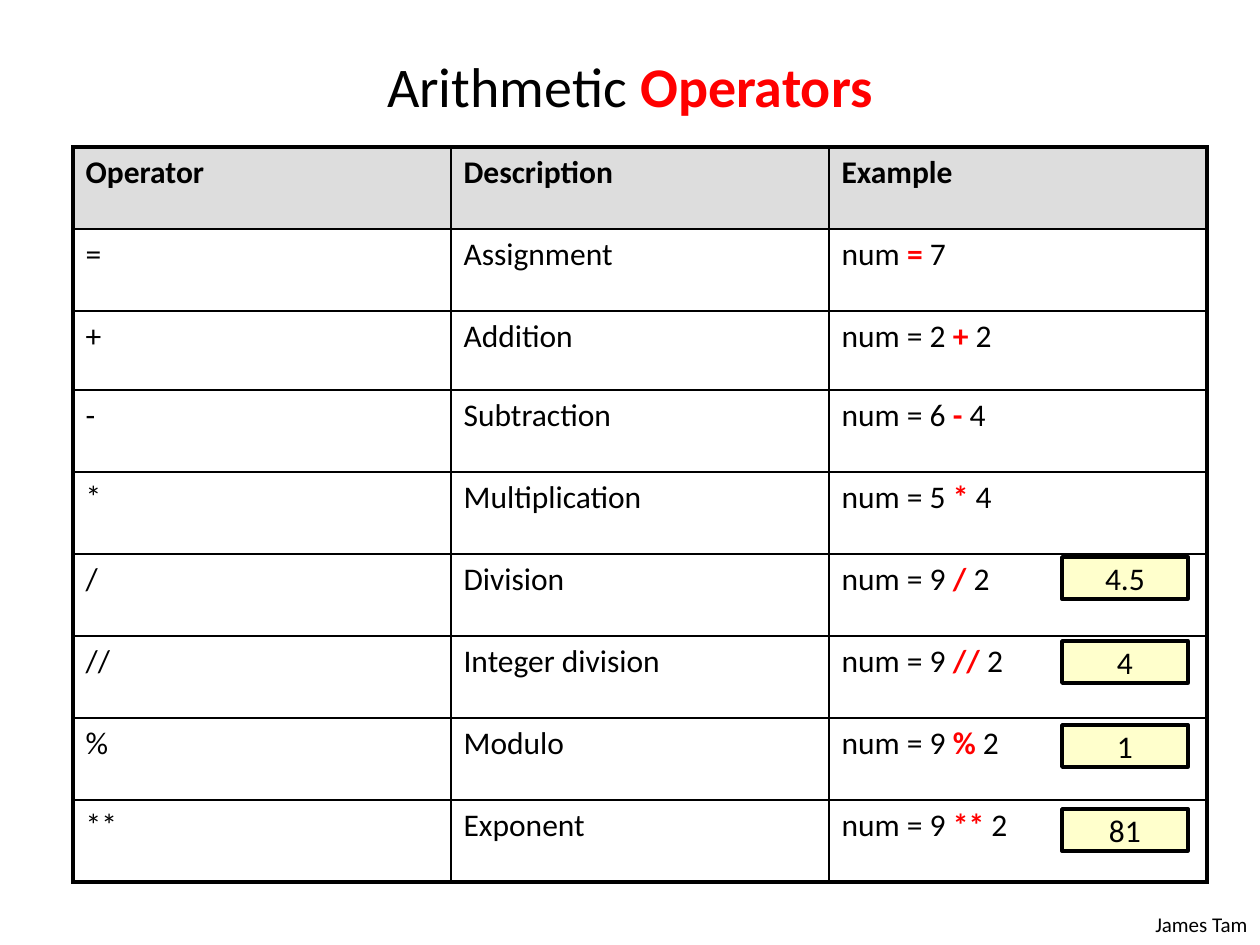
from dataclasses import dataclass

from lxml import etree
from pptx import Presentation
from pptx.dml.color import RGBColor
from pptx.enum.shapes import MSO_SHAPE
from pptx.enum.text import MSO_ANCHOR, PP_ALIGN
from pptx.oxml.ns import qn
from pptx.util import Emu, Pt

RECT = MSO_SHAPE.RECTANGLE
MIDDLE = MSO_ANCHOR.MIDDLE
CENTER, RIGHT = PP_ALIGN.CENTER, PP_ALIGN.RIGHT
PX_PER_INCH = 126


@dataclass(frozen=True)
class Theme:
    font: str = "Calibri"
    ink: str = "000000"
    accent: str = "FF0000"
    header: str = "DDDDDD"
    answer: str = "FFFFCC"
    title_size: int = 32
    body_size: int = 18
    footer_size: int = 12
    outer_line: float = 2.25
    inner_line: float = 1
    answer_line: float = 2


@dataclass(frozen=True)
class Operator:
    symbol: str
    description: str
    before: str
    after: str


THEME = Theme()
HEADINGS = ("Operator", "Description", "Example")
OPERATORS = (
    Operator("=", "Assignment", "num ", " 7"),
    Operator("+", "Addition", "num = 2 ", " 2"),
    Operator("-", "Subtraction", "num = 6 ", " 4"),
    Operator("*", "Multiplication", "num = 5 ", " 4"),
    Operator("/", "Division", "num = 9 ", " 2"),
    Operator("//", "Integer division", "num = 9 ", " 2"),
    Operator("%", "Modulo", "num = 9 ", " 2"),
    Operator("**", "Exponent", "num = 9 ", " 2"),
)
ANSWERS = ("4.5", "4", "1", "81")
COL_WIDTH, ROW_HEIGHT, ADDITION_HEIGHT = 378, 82, 79
ADDITION_ROW = 2
ANSWER_TOP, ANSWER_STEP = 557, 84


def px(n: int) -> Emu:
    return Emu(round(n * 914400 / PX_PER_INCH))


def box(left: int, top: int, width: int, height: int) -> tuple[Emu, ...]:
    return px(left), px(top), px(width), px(height)


def add_run(p, text: str, size: int, bold: bool = False, color: str = THEME.ink) -> None:
    r = p.add_run()
    r.text = text
    r.font.name = THEME.font
    r.font.size = Pt(size)
    r.font.bold = bold
    r.font.color.rgb = RGBColor.from_string(color)


def set_borders(cell, widths: dict[str, float]) -> None:
    """Give each side (L, R, T, B, in that order) a solid line in points."""
    tc_pr = cell._tc.get_or_add_tcPr()
    for i, (side, width) in enumerate(widths.items()):
        ln = etree.Element(qn(f"a:ln{side}"), w=str(Pt(width)))
        fill = etree.SubElement(ln, qn("a:solidFill"))
        etree.SubElement(fill, qn("a:srgbClr"), val=THEME.ink)
        tc_pr.insert(i, ln)


def add_title(slide) -> None:
    sp = slide.shapes.title
    sp.left, sp.top, sp.width, sp.height = box(63, 35, 1134, 101)
    tf = sp.text_frame
    tf.vertical_anchor = MIDDLE
    p = tf.paragraphs[0]
    p.alignment = CENTER
    add_run(p, "Arithmetic ", THEME.title_size)
    add_run(p, "Operators", THEME.title_size, True, THEME.accent)


def add_operator_table(slide) -> None:
    n_rows, n_cols = len(OPERATORS) + 1, len(HEADINGS)
    heights = [ROW_HEIGHT] * n_rows
    heights[ADDITION_ROW] = ADDITION_HEIGHT
    frame = slide.shapes.add_table(
        n_rows, n_cols, *box(73, 147, COL_WIDTH * n_cols, sum(heights)))
    table = frame.table
    table.first_row = table.horz_banding = False
    for col in table.columns:
        col.width = px(COL_WIDTH)
    for row, height in zip(table.rows, heights):
        row.height = px(height)

    for i in range(n_rows):
        for j in range(n_cols):
            cell = table.cell(i, j)
            if i == 0:
                cell.fill.solid()
                cell.fill.fore_color.rgb = RGBColor.from_string(THEME.header)
            else:
                cell.fill.background()
            on_edge = {"L": j == 0, "R": j == n_cols - 1,
                       "T": i == 0, "B": i == n_rows - 1}
            set_borders(cell, {side: THEME.outer_line if edge else THEME.inner_line
                               for side, edge in on_edge.items()})

    size = THEME.body_size
    for j, heading in enumerate(HEADINGS):
        add_run(table.cell(0, j).text_frame.paragraphs[0], heading, size, True)
    for i, op in enumerate(OPERATORS, start=1):
        symbol, description, example = (
            table.cell(i, j).text_frame.paragraphs[0] for j in range(n_cols))
        add_run(symbol, op.symbol, size)
        add_run(description, op.description, size)
        add_run(example, op.before, size)
        add_run(example, op.symbol, size, True, THEME.accent)
        add_run(example, op.after, size)


def add_answer(slide, text: str, top: int) -> None:
    sp = slide.shapes.add_shape(RECT, *box(1062, top, 126, 42))
    sp.shadow.inherit = False
    sp.fill.solid()
    sp.fill.fore_color.rgb = RGBColor.from_string(THEME.answer)
    sp.line.color.rgb = RGBColor.from_string(THEME.ink)
    sp.line.width = Pt(THEME.answer_line)
    tf = sp.text_frame
    tf.vertical_anchor = MIDDLE
    p = tf.paragraphs[0]
    p.alignment = CENTER
    add_run(p, text, THEME.body_size)


def add_footer(slide) -> None:
    sp = slide.shapes.add_textbox(*box(1092, 905, 168, 38))
    tf = sp.text_frame
    tf.word_wrap = True
    p = tf.paragraphs[0]
    p.alignment = RIGHT
    add_run(p, "James Tam", THEME.footer_size)


def main() -> None:
    prs = Presentation()
    prs.slide_width, prs.slide_height = px(1260), px(945)
    slide = prs.slides.add_slide(prs.slide_layouts[5])
    add_footer(slide)
    add_title(slide)
    add_operator_table(slide)
    for i, answer in enumerate(ANSWERS):
        add_answer(slide, answer, ANSWER_TOP + i * ANSWER_STEP)
    prs.save("out.pptx")


if __name__ == "__main__":
    main()
